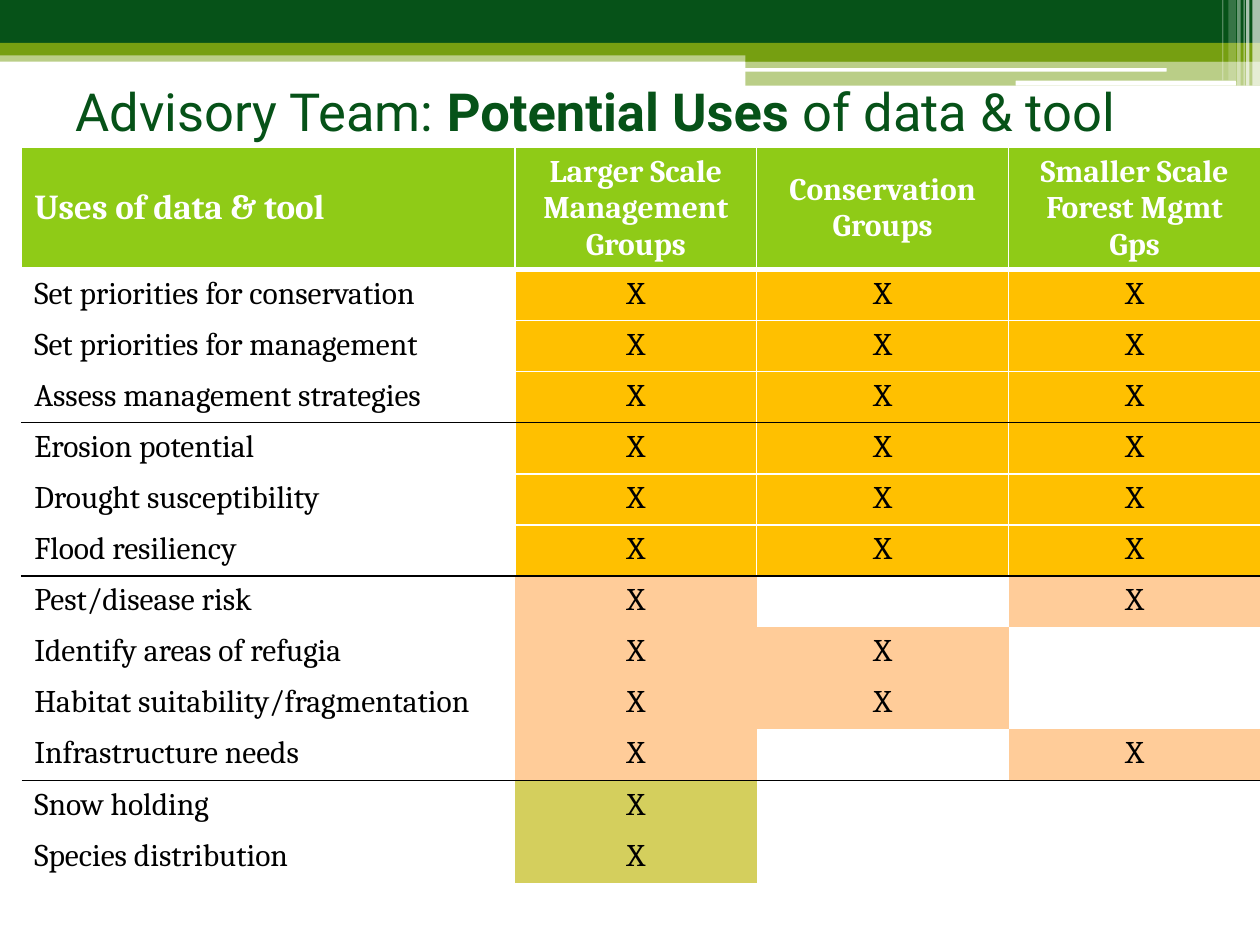
from pptx import Presentation
from pptx.dml.color import RGBColor
from pptx.enum.shapes import MSO_SHAPE
from pptx.enum.text import MSO_ANCHOR, MSO_AUTO_SIZE, PP_ALIGN
from pptx.oxml.ns import qn
from pptx.util import Pt
from lxml import etree

RECT, ROUND = MSO_SHAPE.RECTANGLE, MSO_SHAPE.ROUNDED_RECTANGLE
LEFT, CENTER = PP_ALIGN.LEFT, PP_ALIGN.CENTER
TOP, MIDDLE, BOTTOM = MSO_ANCHOR.TOP, MSO_ANCHOR.MIDDLE, MSO_ANCHOR.BOTTOM
NO_AUTOFIT = MSO_AUTO_SIZE.NONE

COLORS = {
    "white": "FFFFFF", "black": "000000", "forest": "065218", "olive": "769F11",
    "header": "8FCB17", "all": "FFC000", "some": "FFCC99", "one": "D4CF5D",
}
BODY_FONT, TITLE_FONT = "Cambria", "Roboto"

BANDS = [
    (RECT, 0, 28.8, 720, 6.5, "olive", 50),
    (RECT, 0, 0, 720, 24.5, "forest", 100),
    (RECT, 0, 24.5, 720, 7.2, "olive", 100),
    (RECT, 426, 28, 294, 7.2, "olive", 100),
    (RECT, 426, 34.6, 294, 14.4, "olive", 50),
    (ROUND, 425.5, 38.9, 241.2, 2, "white", 100),
    (ROUND, 580.3, 46.1, 126, 2.9, "white", 100),
]
STRIPES = [
    (715.7, 4.3, 49, 65), (712, 2, 49, 65), (710.6, 0.7, 49, 60),
    (707, 2, 49, 40), (702, 4.3, 46, 20), (698.4, 0.7, 46, 30),
]
TITLE = [("Advisory Team: ", False), ("Potential Uses ", True), ("of data & tool", False)]

HEADERS = [
    ("Uses of data & tool", 20, LEFT, MIDDLE),
    ("Larger Scale Management Groups", 18, CENTER, MIDDLE),
    ("Conservation Groups", 18, CENTER, MIDDLE),
    ("Smaller Scale Forest Mgmt Gps", 18, CENTER, BOTTOM),
]
GROUPS = [
    ("all", [("Set priorities for conservation", "XXX"),
             ("Set priorities for management", "XXX"),
             ("Assess management strategies", "XXX")]),
    ("all", [("Erosion potential", "XXX"),
             ("Drought susceptibility", "XXX"),
             ("Flood resiliency", "XXX")]),
    ("some", [("Pest/disease risk", "X-X"),
              ("Identify areas of refugia", "XX-"),
              ("Habitat suitability/fragmentation", "XX-"),
              ("Infrastructure needs", "X-X")]),
    ("one", [("Snow holding", "X--"),
             ("Species distribution", "X--")]),
]
COLUMN_WIDTHS = [282, 138, 144, 144]
HEADER_HEIGHT, ROW_HEIGHT = 67.8, 29.2
TABLE_LEFT, TABLE_TOP = 12.4, 84.4


def rgb(name):
    return RGBColor.from_string(COLORS[name])


def add_band(slide, kind, left, top, width, height, color, opacity):
    band = slide.shapes.add_shape(kind, Pt(left), Pt(top), Pt(width), Pt(height))
    band.shadow.inherit = False
    band.line.fill.background()
    band.fill.solid()
    band.fill.fore_color.rgb = rgb(color)
    if opacity < 100:
        solid = band.fill._xPr.find(qn("a:solidFill"))
        etree.SubElement(solid[0], qn("a:alpha"), val=str(opacity * 1000))


def add_run(para, text, font, size, color, bold):
    span = para.add_run()
    span.text = text
    span.font.name = font
    span.font.size = Pt(size)
    span.font.bold = bold
    span.font.color.rgb = rgb(color)


def set_border(cell, side, border):
    color, width = border or (None, 0)
    line = etree.SubElement(cell._tc.get_or_add_tcPr(), qn("a:ln" + side), w=str(Pt(width)))
    if color:
        solid = etree.SubElement(line, qn("a:solidFill"))
        etree.SubElement(solid, qn("a:srgbClr"), val=COLORS[color])
    else:
        etree.SubElement(line, qn("a:noFill"))


def fill_cell(cell, text, size, color, bold, align, anchor, fill, borders):
    for side, border in zip("LRTB", borders):
        set_border(cell, side, border)
    cell.fill.solid()
    cell.fill.fore_color.rgb = rgb(fill)
    cell.vertical_anchor = anchor
    para = cell.text_frame.paragraphs[0]
    para.alignment = align
    if text:
        add_run(para, text, BODY_FONT, size, color, bold)
    else:
        para.font.size = Pt(size)


def add_uses_table(slide):
    row_count = 1 + sum(len(uses) for _, uses in GROUPS)
    height = HEADER_HEIGHT + ROW_HEIGHT * (row_count - 1)
    table = slide.shapes.add_table(
        row_count, len(HEADERS), Pt(TABLE_LEFT), Pt(TABLE_TOP),
        Pt(sum(COLUMN_WIDTHS)), Pt(height)).table
    table.horz_banding = False
    for column, width in zip(table.columns, COLUMN_WIDTHS):
        column.width = Pt(width)
    for row in table.rows:
        row.height = Pt(ROW_HEIGHT)
    table.rows[0].height = Pt(HEADER_HEIGHT)

    thin, thick, rule = ("white", 1), ("white", 3), ("black", 1)
    for column, (text, size, align, anchor) in enumerate(HEADERS):
        fill_cell(table.cell(0, column), text, size, "white", True, align, anchor,
                  "header", (thin, thin, thin, thick))

    row = 1
    for group, (color, uses) in enumerate(GROUPS):
        grid = thin if color == "all" else None
        for index, (use, marks) in enumerate(uses):
            top = bottom = grid
            if index == 0:
                top = rule if group else thick
            if index == len(uses) - 1 and group < len(GROUPS) - 1:
                bottom = rule
            borders = (grid, grid, top, bottom)
            fill_cell(table.cell(row, 0), use, 18, "black", False, LEFT, TOP, "white", borders)
            for column, mark in enumerate(marks, 1):
                marked = mark == "X"
                fill_cell(table.cell(row, column), "X" if marked else "", 18, "black", False,
                          CENTER, TOP, color if marked else "white", borders)
            row += 1


def main():
    deck = Presentation()
    deck.slide_width, deck.slide_height = Pt(720), Pt(540)
    slide = deck.slides.add_slide(deck.slide_layouts[5])
    for band in BANDS:
        add_band(slide, *band)
    for left, width, height, opacity in STRIPES:
        add_band(slide, RECT, left, 0, width, height, "white", opacity)

    title = slide.shapes.title
    title.left, title.top, title.width, title.height = Pt(36), Pt(33.1), Pt(648), Pt(60)
    frame = title.text_frame
    frame.auto_size = NO_AUTOFIT
    frame.vertical_anchor = MIDDLE
    para = frame.paragraphs[0]
    para.alignment = LEFT
    for text, bold in TITLE:
        add_run(para, text, TITLE_FONT, 30, "forest", bold)

    add_uses_table(slide)
    deck.save("out.pptx")


if __name__ == "__main__":
    main()
